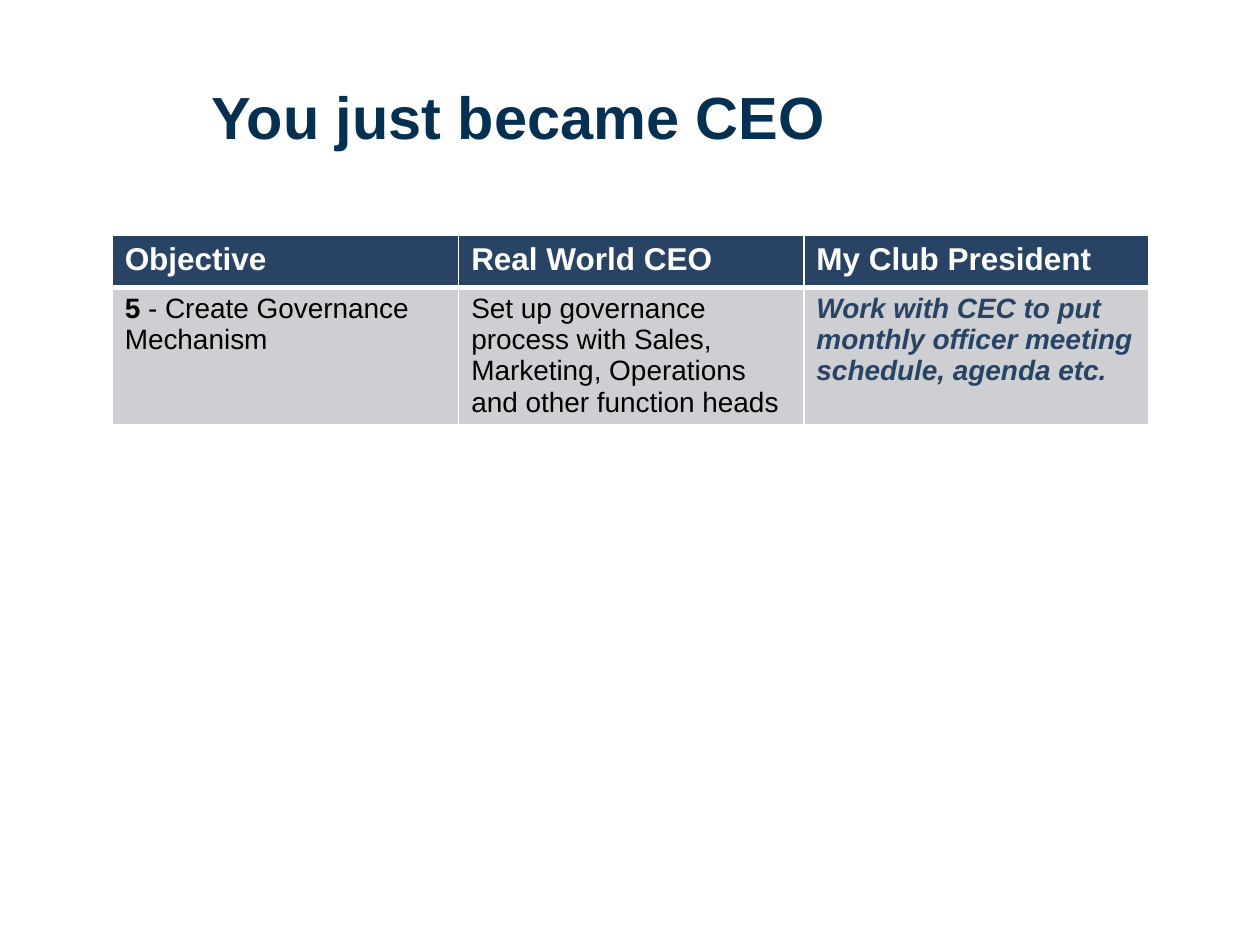
from lxml import etree
from pptx import Presentation
from pptx.dml.color import RGBColor
from pptx.enum.text import MSO_ANCHOR, PP_ALIGN
from pptx.oxml.ns import qn
from pptx.util import Inches, Pt

MIDDLE = MSO_ANCHOR.MIDDLE
LEFT = PP_ALIGN.LEFT


class Theme:
    font = "Arial"
    title = RGBColor.from_string("063052")
    navy = RGBColor.from_string("294364")
    grey = RGBColor.from_string("CDCFD3")
    white = RGBColor.from_string("FFFFFF")
    black = RGBColor.from_string("000000")
    title_size = Pt(34)
    head_size = Pt(18)
    body_size = Pt(16)


def set_font(para, size, color, bold=None, italic=None):
    font = para.font
    font.name = Theme.font
    font.size = size
    font.color.rgb = color
    font.bold = bold
    font.italic = italic


def add_border(cell, side, width):
    props = cell._tc.get_or_add_tcPr()
    line = etree.SubElement(props, qn("a:ln" + side), w=str(Pt(width)))
    fill = etree.SubElement(line, qn("a:solidFill"))
    etree.SubElement(fill, qn("a:srgbClr"), val=str(Theme.white))


prs = Presentation()
prs.slide_width = Inches(10)
prs.slide_height = Inches(7.5)
slide = prs.slides.add_slide(prs.slide_layouts[5])

title = slide.shapes.title
title.left, title.top = Inches(1.58), Inches(0.58)
title.width, title.height = Inches(8.17), Inches(0.67)
frame = title.text_frame
frame.text = "You just became CEO"
frame.vertical_anchor = MIDDLE
para = frame.paragraphs[0]
para.alignment = LEFT
set_font(para, Theme.title_size, Theme.title, True)

rows = [
    [["Objective"], ["Real World CEO"], ["My Club President"]],
    [
        ["5 ", "- Create Governance Mechanism"],
        ["Set up governance process with Sales, Marketing, "
         "Operations and other function heads"],
        ["Work with CEC to put monthly officer meeting schedule, agenda etc."],
    ],
]
widths = [2.75, 2.74, 2.74]

table = slide.shapes.add_table(
    len(rows), len(widths), Inches(0.89), Inches(1.87),
    Inches(sum(widths)), Inches(0.82)
).table
for col, width in zip(table.columns, widths):
    col.width = Inches(width)

for r, row in enumerate(rows):
    table.rows[r].height = Inches(0.41)
    head = r == 0
    for c, parts in enumerate(row):
        cell = table.cell(r, c)
        para = cell.text_frame.paragraphs[0]
        for part in parts:
            para.add_run().text = part
        last = c == len(widths) - 1
        if head:
            set_font(para, Theme.head_size, Theme.white, True)
        elif last:
            set_font(para, Theme.body_size, Theme.navy, True, True)
        else:
            set_font(para, Theme.body_size, Theme.black, False)
        for side in "LRTB":
            thick = side == ("B" if head else "T")
            add_border(cell, side, 3 if thick else 1)
        cell.fill.solid()
        cell.fill.fore_color.rgb = Theme.navy if head else Theme.grey

table.cell(1, 0).text_frame.paragraphs[0].runs[0].font.bold = True

prs.save("out.pptx")
